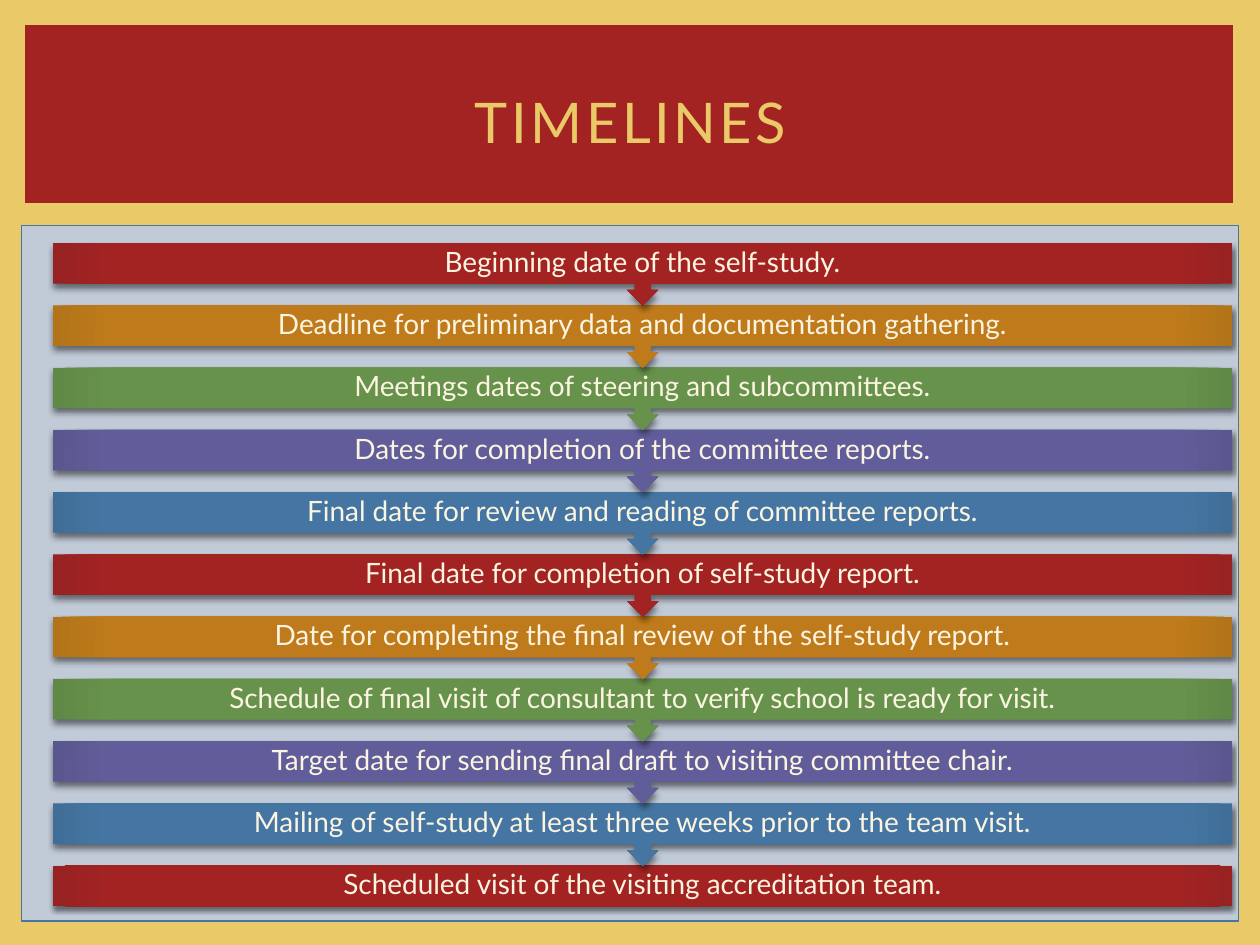
from itertools import cycle, islice
from lxml.etree import SubElement
from pptx import Presentation
from pptx.dml.color import RGBColor
from pptx.enum.shapes import MSO_SHAPE
from pptx.enum.text import MSO_ANCHOR, MSO_AUTO_SIZE, PP_ALIGN
from pptx.oxml import parse_xml
from pptx.oxml.ns import nsdecls, qn
from pptx.util import Cm, Pt

TITLE = "TIMELINES"
STEPS = [
    "Beginning date of the self-study.",
    "Deadline for preliminary data and documentation gathering.",
    "Meetings dates of steering and subcommittees.",
    "Dates for completion of the committee reports.",
    "Final date for review and reading of committee reports.",
    "Final date for completion of self-study report.",
    "Date for completing the final review of the self-study report.",
    "Schedule of final visit of consultant to verify school is ready for visit.",
    "Target date for sending final draft to visiting committee chair.",
    "Mailing of self-study at least three weeks prior to the team visit.",
    "Scheduled visit of the visiting accreditation team.",
]
THEME = {
    "font": "Lato",
    "title_size": 32,
    "step_size": 16,
    "gold": "EAC968",
    "red": "A32323",
    "blue": "4576A3",
    "panel": "C1CAD7",
    "cream": "FBF4E1",
    "steps": [
        ("A32323", "982121"),
        ("BF7B1B", "B27319"),
        ("67924B", "608846"),
        ("615D9A", "5A578F"),
        ("4576A3", "406E98"),
    ],
}
LEFT, TOP, WIDTH = 1.07, 4.9, 23.77
PITCH, CALLOUT_H, LABEL_H = 1.255, 1.26, 0.82


def rgb(color):
    return RGBColor.from_string(color)


def write(sp, text, size, color, spacing=None, line_spacing=None):
    tf = sp.text_frame
    tf.word_wrap = True
    tf.auto_size = MSO_AUTO_SIZE.NONE
    tf.vertical_anchor = MSO_ANCHOR.MIDDLE
    p = tf.paragraphs[0]
    p.alignment = PP_ALIGN.CENTER
    p.line_spacing = line_spacing
    r = p.add_run()
    r.text = text
    r.font.name = THEME["font"]
    r.font.size = Pt(size)
    r.font.color.rgb = rgb(color)
    if spacing:
        r.font._element.set("spc", str(spacing * 100))


def add_panel(s, box, fill, line, line_width):
    sp = s.shapes.add_shape(MSO_SHAPE.RECTANGLE, *map(Cm, box))
    sp.shadow.inherit = False
    sp.fill.solid()
    sp.fill.fore_color.rgb = rgb(fill)
    sp.line.color.rgb = rgb(line)
    sp.line.width = Pt(line_width)


def shade(sp, base, edge):
    sp.line.fill.background()
    sp.shadow.inherit = False
    sp_pr = sp._element.spPr
    stops = "".join(
        f'<a:gs pos="{pos}"><a:srgbClr val="{color}"/></a:gs>'
        for pos, color in [(0, base), (90000, base), (100000, edge)]
    )
    sp_pr.find(qn("a:prstGeom")).addnext(parse_xml(
        f'<a:gradFill {nsdecls("a")} rotWithShape="1"><a:gsLst>{stops}</a:gsLst>'
        '<a:path path="circle"><a:fillToRect l="100000" t="100000" '
        'r="100000" b="100000"/></a:path></a:gradFill>'
    ))
    shadow = SubElement(
        sp_pr.find(qn("a:effectLst")), qn("a:outerShdw"), blurRad=str(Pt(2.5)),
        dist=str(Pt(2)), dir="5400000", rotWithShape="0",
    )
    black = SubElement(shadow, qn("a:srgbClr"), val="000000")
    SubElement(black, qn("a:alpha"), val="50000")


def add_step(s, index, text, colors):
    last = index == len(STEPS) - 1
    x, y, w = Cm(LEFT), Cm(TOP + index * PITCH), Cm(WIDTH)
    kind = MSO_SHAPE.RECTANGLE if last else MSO_SHAPE.UP_ARROW_CALLOUT
    sp = s.shapes.add_shape(kind, x, y, w, Cm(LABEL_H if last else CALLOUT_H))
    sp.rotation = 0 if last else 180
    shade(sp, *colors)
    label = s.shapes.add_textbox(x, y, w, Cm(LABEL_H))
    tf = label.text_frame
    tf.margin_left = tf.margin_right = tf.margin_top = tf.margin_bottom = Cm(0.3)
    write(label, text, THEME["step_size"], THEME["cream"], line_spacing=0.9)


def main():
    prs = Presentation()
    prs.slide_width, prs.slide_height = Cm(25.4), Cm(19.05)
    s = prs.slides.add_slide(prs.slide_layouts[5])
    s.background.fill.solid()
    s.background.fill.fore_color.rgb = rgb(THEME["gold"])

    add_panel(s, (0.43, 4.55, 24.54, 14.02), THEME["panel"], THEME["blue"], 0.79)
    add_panel(s, (0.43, 0.43, 24.49, 3.73), THEME["red"], THEME["gold"], 3.75)

    colors = islice(cycle(THEME["steps"]), len(STEPS))
    for index, (text, pair) in reversed(list(enumerate(zip(STEPS, colors)))):
        add_step(s, index, text, pair)

    title = s.shapes.title
    title.left, title.top, title.width, title.height = map(Cm, (1.07, 0.99, 23.29, 2.92))
    write(title, TITLE, THEME["title_size"], THEME["gold"], spacing=2)
    s.shapes._spTree.append(title._element)

    prs.save("out.pptx")


if __name__ == "__main__":
    main()
